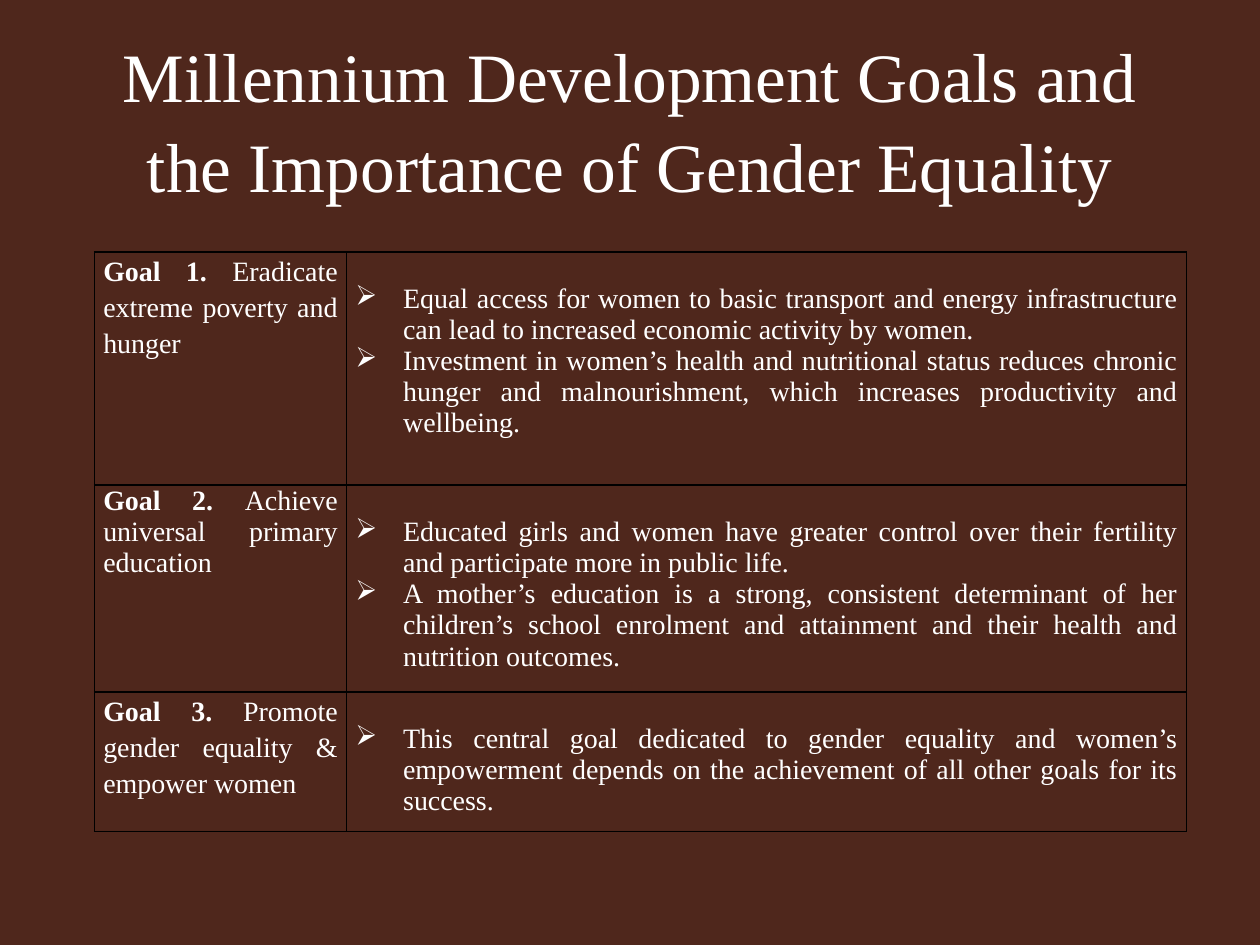
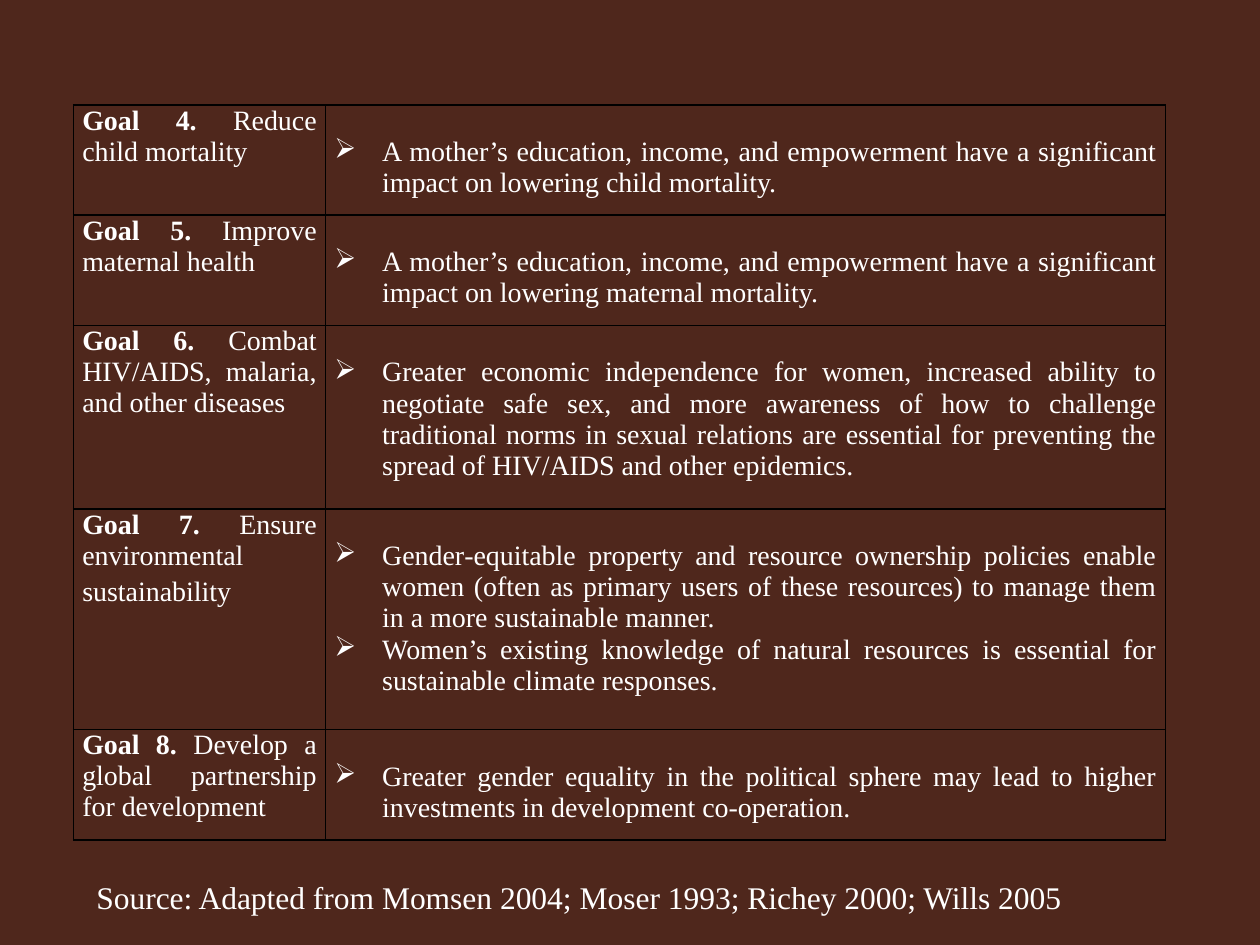
"""Builds two slides on the Millennium Development Goals and gender equality."""
from collections import namedtuple

from lxml import etree
from pptx import Presentation
from pptx.dml.color import RGBColor
from pptx.enum.text import MSO_ANCHOR, PP_ALIGN
from pptx.oxml.ns import qn
from pptx.util import Inches, Pt

CENTER, JUSTIFY, LEFT = PP_ALIGN.CENTER, PP_ALIGN.JUSTIFY, PP_ALIGN.LEFT
MIDDLE, TOP = MSO_ANCHOR.MIDDLE, MSO_ANCHOR.TOP

Theme = namedtuple("Theme", "ground ink border font title body source border_width")
THEME = Theme(
    ground=RGBColor.from_string("4F271C"),
    ink=RGBColor.from_string("FFFFFF"),
    border="000000",
    font="Times New Roman",
    title=Pt(39.6),
    body=Pt(16),
    source=Pt(18),
    border_width=Pt(1),
)

Goal = namedtuple("Goal", "rows name aims spacing reasons")
LOOSE, SINGLE = 1.15, 1.0
CHAPTERS = [
    ((9, 24), [
        Goal(22.2, "Goal 1. ", ["Eradicate extreme poverty and hunger"], [LOOSE], [
            "Equal access for women to basic transport and energy infrastructure "
            "can lead to increased economic activity by women.",
            "Investment in women’s health and nutritional status reduces chronic "
            "hunger and malnourishment, which increases productivity and wellbeing.",
        ]),
        Goal(19.7, "Goal 2. ", ["Achieve universal primary education"], [SINGLE], [
            "Educated girls and women have greater control over their fertility "
            "and participate more in public life.",
            "A mother’s education is a strong, consistent determinant of her children’s "
            "school enrolment and attainment and their health and nutrition outcomes.",
        ]),
        Goal(13.3, "Goal 3. ", ["Promote gender equality & empower women"], [LOOSE], [
            "This central goal dedicated to gender equality and women’s empowerment "
            "depends on the achievement of all other goals for its success.",
        ]),
    ]),
    ((7, 10), [
        Goal(10.5, "Goal 4. ", ["Reduce child mortality"], [SINGLE], [
            "A mother’s education, income, and empowerment have a significant "
            "impact on lowering child mortality.",
        ]),
        Goal(10.5, "Goal 5. ", ["Improve maternal health"], [SINGLE], [
            "A mother’s education, income, and empowerment have a significant "
            "impact on lowering maternal mortality.",
        ]),
        Goal(17.5, "Goal 6. ", ["Combat HIV/AIDS, malaria, and other diseases"], [SINGLE], [
            "Greater economic independence for women, increased ability to negotiate "
            "safe sex, and more awareness of how to challenge traditional norms in sexual "
            "relations are essential for preventing the spread of HIV/AIDS and other epidemics.",
        ]),
        Goal(21, "Goal 7. ", ["Ensure environmental", "sustainability"], [SINGLE, LOOSE], [
            "Gender‐equitable property and resource ownership policies enable women (often "
            "as primary users of these resources) to manage them in a more sustainable manner.",
            "Women’s existing knowledge of natural resources is essential for "
            "sustainable climate responses.",
        ]),
        Goal(10.5, "Goal 8. ", ["Develop a global partnership for development"], [SINGLE], [
            "Greater gender equality in the political sphere may lead to higher "
            "investments in development co‐operation.",
        ]),
    ]),
]
GOAL_COLUMNS, REASON_COLUMNS = 24, 80

deck = Presentation()
deck.slide_width, deck.slide_height = Inches(10), Inches(7.5)
UNIT = deck.slide_width / 120


def grid(*steps):
    """Turns grid steps into slide lengths."""
    return [round(step * UNIT) for step in steps]


def write(frame, lines, size, align, spacing):
    """Fills a text frame and formats every run in the theme's type."""
    frame.word_wrap = True
    frame.text = "\n".join(lines)
    for paragraph, line_spacing in zip(frame.paragraphs, spacing):
        paragraph.alignment = align
        paragraph.line_spacing = line_spacing
        for run in paragraph.runs:
            run.font.name, run.font.size = THEME.font, size
            run.font.color.rgb = THEME.ink


slides = []
for (left, top), goals in CHAPTERS:
    slide = deck.slides.add_slide(deck.slide_layouts[6])
    slide.background.fill.solid()
    slide.background.fill.fore_color.rgb = THEME.ground
    slides.append(slide)

    area = grid(left, top, GOAL_COLUMNS + REASON_COLUMNS, sum(goal.rows for goal in goals))
    table = slide.shapes.add_table(len(goals), 2, *area).table
    table.first_row = table.horz_banding = False
    table.columns[0].width, table.columns[1].width = grid(GOAL_COLUMNS, REASON_COLUMNS)

    for row, goal in enumerate(goals):
        table.rows[row].height = grid(goal.rows)[0]
        aim_cell, reason_cell = table.cell(row, 0), table.cell(row, 1)
        for cell in (aim_cell, reason_cell):
            cell.margin_left = cell.margin_right = Inches(0.07)
            cell.margin_top = cell.margin_bottom = 0
            for side in ("a:lnL", "a:lnR", "a:lnT", "a:lnB"):
                edge = etree.SubElement(cell._tc.get_or_add_tcPr(), qn(side), w=str(THEME.border_width))
                paint = etree.SubElement(edge, qn("a:solidFill"))
                etree.SubElement(paint, qn("a:srgbClr"), val=THEME.border)
            cell.fill.background()

        write(aim_cell.text_frame, goal.aims, THEME.body, JUSTIFY, goal.spacing)
        opening = aim_cell.text_frame.paragraphs[0]
        opening.space_before = Pt(3)
        aim = opening.runs[0]
        aim.text = goal.name
        aim.font.bold = True
        rest = opening.add_run()
        rest.text = goal.aims[0]
        rest.font.name, rest.font.size = THEME.font, THEME.body
        rest.font.color.rgb = THEME.ink

        reason_cell.margin_top = Inches(0.25)
        write(reason_cell.text_frame, goal.reasons, THEME.body, JUSTIFY, [SINGLE] * len(goal.reasons))
        for reason in reason_cell.text_frame.paragraphs:
            properties = reason._p.get_or_add_pPr()
            properties.set("marL", str(Inches(0.38)))
            properties.set("indent", str(-Inches(0.38)))
            etree.SubElement(properties, qn("a:buChar"), char="➢")

goals_slide, closing_slide = slides
CAPTIONS = [
    (goals_slide, (6, 3.6, 108, 15), "Millennium Development Goals and the Importance of Gender Equality",
     THEME.title, CENTER, MIDDLE, 1.08),
    (closing_slide, (8, 83, 103, 5), "Source: Adapted from Momsen 2004; Moser 1993; Richey 2000; Wills 2005",
     THEME.source, LEFT, TOP, SINGLE),
]
for slide, area, words, size, align, anchor, line_spacing in CAPTIONS:
    caption = slide.shapes.add_textbox(*grid(*area)).text_frame
    caption.vertical_anchor = anchor
    write(caption, [words], size, align, [line_spacing])

deck.save("out.pptx")
